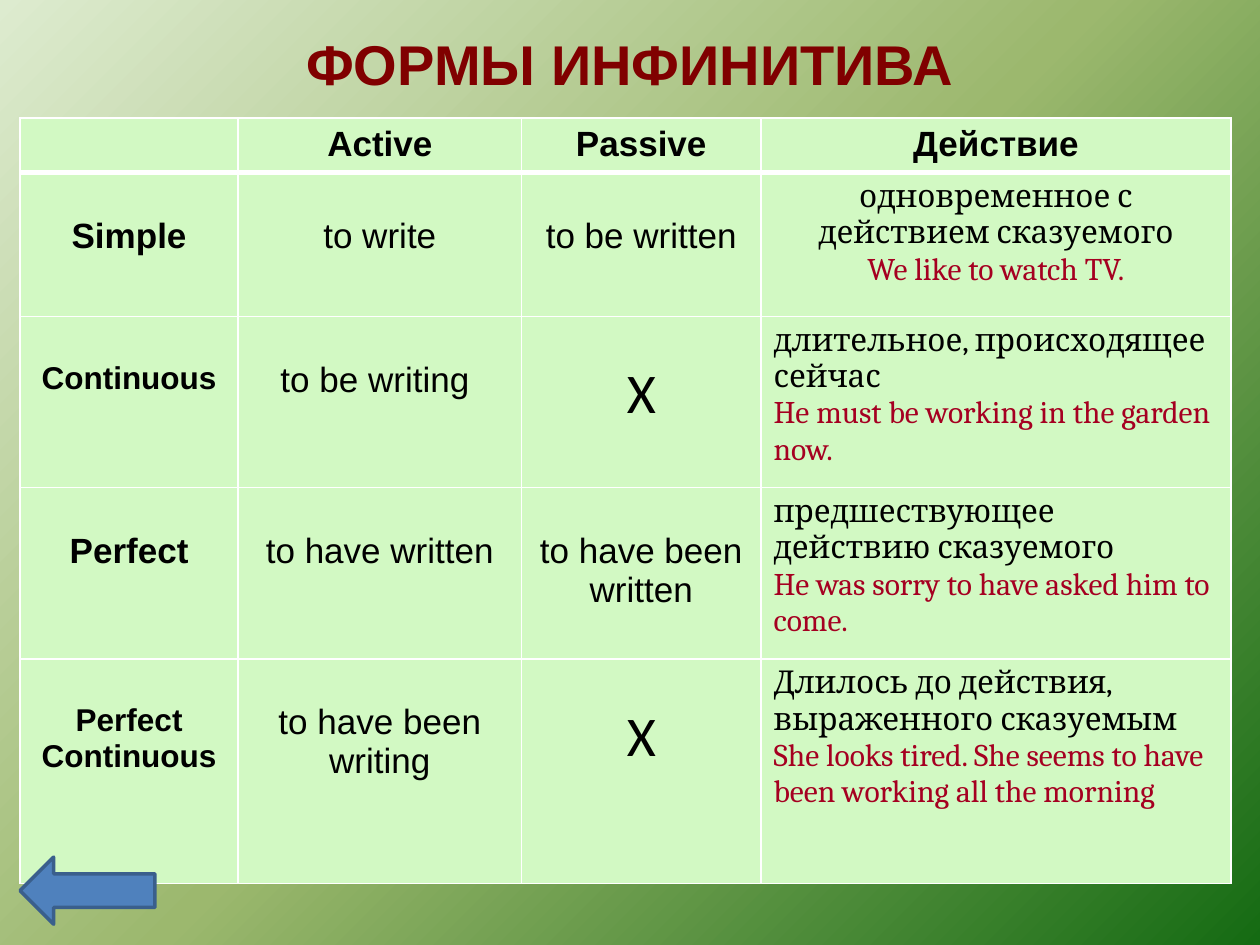
"""Build a slide with a table of the forms of the English infinitive."""
import copy

import pptx
import pptx.dml.color
import pptx.enum.dml
import pptx.enum.shapes
import pptx.enum.text
import pptx.oxml
import pptx.oxml.ns
import pptx.util

RGB = pptx.dml.color.RGBColor
Pt = pptx.util.Pt
Inches = pptx.util.Inches
ALIGN = pptx.enum.text.PP_ALIGN

MAROON = RGB(0x80, 0x00, 0x00)
CRIMSON = RGB(0xA5, 0x00, 0x21)
BLACK = RGB(0x00, 0x00, 0x00)
MINT = RGB(0xD2, 0xF9, 0xC3)
BLUE = RGB(0x4F, 0x81, 0xBD)
NAVY = RGB(0x3A, 0x5F, 0x8C)
BACKDROP = {0: RGB(0xDD, 0xEB, 0xCF), 0.5: RGB(0x9C, 0xB8, 0x6E), 1: RGB(0x15, 0x6B, 0x13)}

WIDTH, HEIGHT = Inches(10), Inches(7.5)
LEFT_EDGE = 0.016
COLUMNS = [1.73, 2.25, 1.9, 3.73]
ROWS = [0.38, 1.14, 1.36, 1.36, 1.78]
TOP_GAP = Inches(0.35)

TITLE = {"name": "Arial", "size": Pt(32), "bold": True}
HEADING = {"name": "Arial", "size": Pt(20), "bold": True}
LONG_HEADING = {**HEADING, "size": Pt(18)}
FORM = {**HEADING, "bold": False}
CROSS = {"name": "Calibri", "size": Pt(32), "bold": False}
MEANING = {"name": "Cambria", "size": Pt(18), "bold": False}

HEADERS = ["", "Active", "Passive", "Действие"]
TENSES = [
    ("Simple", HEADING, "to write", "to be written",
     "одновременное с действием сказуемого", "We like to watch TV.", ALIGN.CENTER),
    ("Continuous", LONG_HEADING, "to be writing ", "X",
     "длительное, происходящее сейчас", "He must be working in the garden now.", ALIGN.LEFT),
    ("Perfect", HEADING, "to have written", "to have been written",
     "предшествующее действию сказуемого", "He was sorry to have asked him to come.", ALIGN.LEFT),
    ("Perfect Continuous", LONG_HEADING, "to have been writing", "X",
     "Длилось до действия, выраженного сказуемым",
     "She looks tired. She seems to have been working all the morning", ALIGN.LEFT),
]


def box(left, top, width, height):
    """Turn shares of the slide's size into lengths."""
    return [int(share * side) for share, side in
            zip((left, top, width, height), (WIDTH, HEIGHT, WIDTH, HEIGHT))]


def paint_background(slide):
    """Fill the slide with the diagonal green gradient."""
    fill = slide.background.fill
    fill.gradient()
    fill.gradient_angle = 315
    stop_list = next(slide.element.iter(pptx.oxml.ns.qn("a:gsLst")))
    stop_list.insert(1, copy.deepcopy(stop_list[0]))
    for stop, (position, color) in zip(fill.gradient_stops, BACKDROP.items()):
        stop.position = position
        stop.color.rgb = color


def write(paragraph, text, style, color=BLACK, align=ALIGN.CENTER):
    """Put one formatted run in a paragraph."""
    paragraph.alignment = align
    run = paragraph.add_run()
    run.text = text
    for attribute, value in style.items():
        setattr(run.font, attribute, value)
    run.font.color.rgb = color


def add_title(slide):
    """Add the centred heading above the table."""
    frame = slide.shapes.add_textbox(*box(0.05, 0.04, 0.9, 0.053)).text_frame
    frame.word_wrap = True
    frame.vertical_anchor = pptx.enum.text.MSO_ANCHOR.MIDDLE
    write(frame.paragraphs[0], "ФОРМЫ ИНФИНИТИВА", TITLE, MAROON)


def format_cell(cell, row):
    """Give a cell its white borders and mint fill."""
    properties = cell._tc.get_or_add_tcPr()
    widths = {"L": 1, "R": 1, "T": 3 if row == 1 else 1, "B": 3 if row == 0 else 1}
    for side, width in widths.items():
        properties.append(pptx.oxml.parse_xml(
            f'<a:ln{side} {pptx.oxml.ns.nsdecls("a")} w="{Pt(width)}"><a:solidFill>'
            f'<a:srgbClr val="FFFFFF"/></a:solidFill></a:ln{side}>'))
    cell.fill.solid()
    cell.fill.fore_color.rgb = MINT


def fill_tense(cells, tense):
    """Write one tense: its name, both voices, the meaning and an example."""
    name, name_style, active, passive, meaning, example, align = tense
    passive_style = CROSS if passive == "X" else FORM
    entries = [(name, name_style), (active, FORM), (passive, passive_style)]
    for cell, (text, style) in zip(cells, entries):
        cell.margin_top = TOP_GAP
        write(cell.text_frame.paragraphs[0], text, style)
    frame = cells[3].text_frame
    write(frame.paragraphs[0], meaning, MEANING, align=align)
    write(frame.add_paragraph(), example, MEANING, CRIMSON, align)


def add_forms_table(slide):
    """Add the table of infinitive forms."""
    place = box(LEFT_EDGE, 0.125, sum(COLUMNS) / 10, sum(ROWS) / 7.5)
    table = slide.shapes.add_table(len(ROWS), len(COLUMNS), *place).table
    for column, width in zip(table.columns, COLUMNS):
        column.width = Inches(width)
    for index, (row, height) in enumerate(zip(table.rows, ROWS)):
        row.height = Inches(height)
        for cell in row.cells:
            format_cell(cell, index)
    for cell, header in zip(table.rows[0].cells, HEADERS):
        if header:
            write(cell.text_frame.paragraphs[0], header, HEADING)
    for index, tense in enumerate(TENSES, start=1):
        fill_tense(list(table.rows[index].cells), tense)


def add_back_arrow(slide):
    """Add the arrow that points back."""
    arrow = slide.shapes.add_shape(
        pptx.enum.shapes.MSO_SHAPE.LEFT_ARROW, *box(LEFT_EDGE, 0.907, 0.107, 0.071))
    arrow.shadow.inherit = False
    arrow.fill.solid()
    arrow.fill.fore_color.rgb = BLUE
    arrow.line.color.rgb = NAVY
    arrow.line.width = Pt(2)


def main():
    """Build the slide and save it."""
    deck = pptx.Presentation()
    deck.slide_width, deck.slide_height = WIDTH, HEIGHT
    slide = deck.slides.add_slide(deck.slide_layouts[6])
    paint_background(slide)
    add_title(slide)
    add_forms_table(slide)
    add_back_arrow(slide)
    deck.save("out.pptx")


if __name__ == "__main__":
    main()
